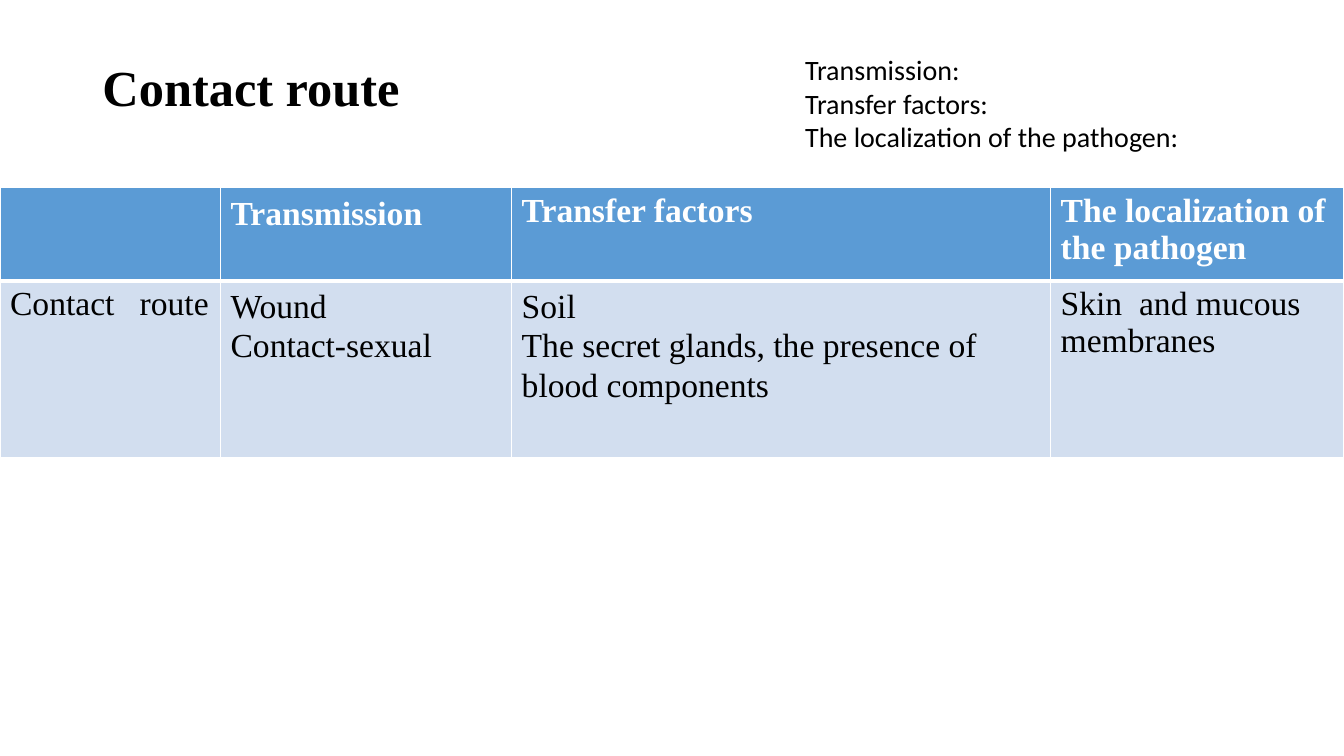
from lxml import etree
from pptx import Presentation
from pptx.dml.color import RGBColor
from pptx.enum.text import MSO_ANCHOR, MSO_AUTO_SIZE, PP_ALIGN
from pptx.oxml.ns import qn
from pptx.util import Pt

TOP, LEFT = MSO_ANCHOR.TOP, PP_ALIGN.LEFT
NO_FIT = MSO_AUTO_SIZE.NONE
BLACK = RGBColor(0x00, 0x00, 0x00)
WHITE = RGBColor(0xFF, 0xFF, 0xFF)
HEADER_BLUE = RGBColor(0x5B, 0x9B, 0xD5)
ROW_BLUE = RGBColor(0xD2, 0xDE, 0xEF)
SERIF, SANS = "Times New Roman", "Calibri"


def write_text(frame, lines, spacing, **font_format):
    frame.text = "\n".join(lines)
    for paragraph in frame.paragraphs:
        paragraph.alignment = LEFT
        paragraph.line_spacing = spacing
        paragraph.font.color.rgb = font_format["color"]
        for run in paragraph.runs:
            run.font.color.rgb = font_format["color"]
            for key in ("name", "size", "bold"):
                setattr(run.font, key, font_format[key])


def add_border(cell, position, side, width):
    line = etree.Element(qn(f"a:ln{side}"), w=str(Pt(width)))
    fill = etree.SubElement(line, qn("a:solidFill"))
    etree.SubElement(fill, qn("a:srgbClr"), val=str(WHITE))
    cell._tc.get_or_add_tcPr().insert(position, line)


presentation = Presentation()
presentation.slide_width, presentation.slide_height = Pt(960), Pt(540)
slide = presentation.slides.add_slide(presentation.slide_layouts[5])

# Title
title = slide.shapes.title
title.left, title.top, title.width, title.height = Pt(66), Pt(28.8), Pt(828), Pt(104.4)
title_format = {"vertical_anchor": TOP, "margin_top": Pt(16.3),
                "auto_size": NO_FIT, "word_wrap": True}
for key, value in title_format.items():
    setattr(title.text_frame, key, value)
write_text(title.text_frame, ["Contact route"], 0.9,
           name=SERIF, size=Pt(36), bold=True, color=BLACK)

# Questions at the top right
questions = slide.shapes.add_textbox(Pt(568), Pt(34), Pt(356.4), Pt(80)).text_frame
questions.word_wrap = True
write_text(questions,
           ["Transmission:", "Transfer factors:", "The localization of the pathogen:"],
           1.0, name=SANS, size=Pt(20), bold=False, color=BLACK)

# Table: each cell holds its lines and its line spacing
ROUTE_ROWS = [
    [([], 1.0), (["Transmission"], 1.07), (["Transfer factors"], 1.0),
     (["The localization of the pathogen"], 1.0)],
    [(["Contact   route"], 1.0), (["Wound", "Contact-sexual"], 1.07),
     (["Soil", "The secret glands, the presence of blood components"], 1.07),
     (["Skin  and mucous membranes"], 1.0)],
]
COLUMN_WIDTHS = [157.5, 208, 385, 209.5]
ROW_HEIGHTS = [66.5, 126.5]
ROW_STYLES = [(HEADER_BLUE, WHITE, True), (ROW_BLUE, BLACK, False)]
HEADER_RULE = 3

routes = slide.shapes.add_table(2, 4, Pt(0), Pt(134), Pt(960), Pt(193)).table
for column, width in zip(routes.columns, COLUMN_WIDTHS):
    column.width = Pt(width)
for row_index, row in enumerate(ROUTE_ROWS):
    routes.rows[row_index].height = Pt(ROW_HEIGHTS[row_index])
    fill_color, text_color, bold = ROW_STYLES[row_index]
    for column_index, (lines, spacing) in enumerate(row):
        cell = routes.cell(row_index, column_index)
        cell.fill.solid()
        cell.fill.fore_color.rgb = fill_color
        write_text(cell.text_frame, lines, spacing,
                   name=SERIF, size=Pt(24), bold=bold, color=text_color)
        # The rule between the two rows is thicker than the other borders
        top_width, bottom_width = (1, HEADER_RULE) if row_index == 0 else (HEADER_RULE, 1)
        widths = {"L": 1, "R": 1, "T": top_width, "B": bottom_width}
        for position, (side, width) in enumerate(widths.items()):
            add_border(cell, position, side, width)

presentation.save("out.pptx")
